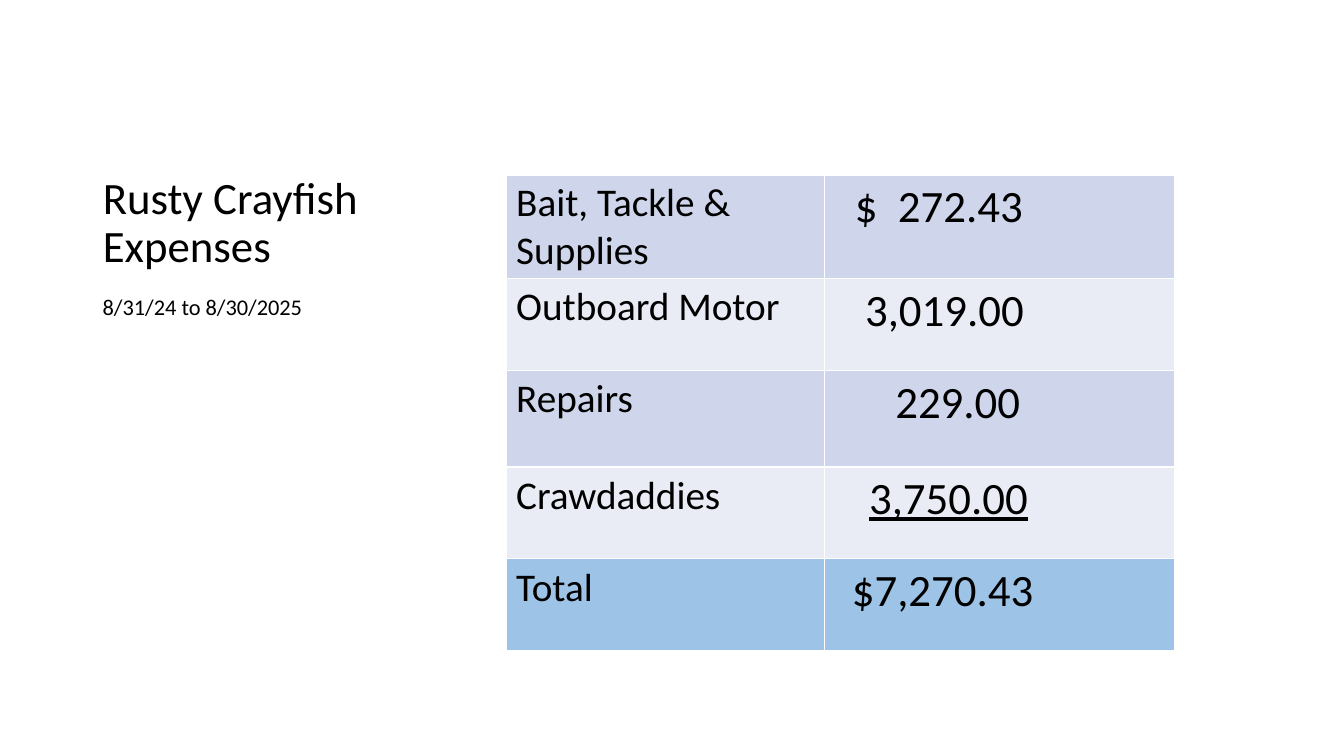
from lxml import etree
from pptx import Presentation
from pptx.dml.color import RGBColor
from pptx.enum.text import MSO_ANCHOR, PP_ALIGN
from pptx.oxml.ns import qn
from pptx.util import Inches, Pt

LEFT = PP_ALIGN.LEFT
TOP, BOTTOM = MSO_ANCHOR.TOP, MSO_ANCHOR.BOTTOM

TITLE = "Rusty Crayfish Expenses"
PERIOD = "8/31/24 to 8/30/2025"
# label, amount, indent of the amount in inches, underlined
EXPENSES = [
    ("Bait, Tackle & Supplies", "$  272.43", 0.2, False),
    ("Outboard Motor", "3,019.00", 0.3, False),
    ("Repairs", "229.00", 0.6, False),
    ("Crawdaddies", "3,750.00", 0.34, True),
    ("Total", "$7,270.43", 0.17, False),
]

THEME = {
    "font": "Calibri", "text": "000000", "border": "FFFFFF", "header": "FFFFFF",
    "bands": ("CFD5EA", "E9EBF5"), "total": "9DC3E6",
    "title_size": 32, "period_size": 16, "label_size": 28, "amount_size": 32,
}
TITLE_BOX = (0.92, 1, 4.3, 1.75)
PERIOD_BOX = (0.92, 2.89, 4.3, 4.12)
TABLE_BOX = (5.02, 1.07, 6.63, 5.37)
COLUMN_WIDTHS = (3.16, 3.47)
ROW_HEIGHTS = (0.66, 1.02, 0.91, 0.96, 0.91, 0.91)
CELL_MARGIN = 0.1
THIN, THICK = 1, 3


def write(text_frame, text, size, **extra):
    text_frame.text = text
    paragraph = text_frame.paragraphs[0]
    paragraph.alignment = LEFT
    values = {"name": THEME["font"], "size": Pt(size), "bold": False, **extra}
    for name, value in values.items():
        setattr(paragraph.font, name, value)
    paragraph.font.color.rgb = RGBColor.from_string(THEME["text"])
    return paragraph


def write_heading(shape, box, text, size, anchor):
    shape.left, shape.top, shape.width, shape.height = map(Inches, box)
    shape.text_frame.word_wrap = True
    shape.text_frame.vertical_anchor = anchor
    write(shape.text_frame, text, size).line_spacing = 0.9


def style_cell(cell, color, top=THIN, bottom=THIN):
    """Give a cell its fill and white borders; border widths are in points."""
    properties = cell._tc.get_or_add_tcPr()
    for side, width in (("L", THIN), ("R", THIN), ("T", top), ("B", bottom)):
        line = etree.SubElement(properties, qn(f"a:ln{side}"), w=str(Pt(width)))
        fill = etree.SubElement(line, qn("a:solidFill"))
        etree.SubElement(fill, qn("a:srgbClr"), val=THEME["border"])
    cell.fill.solid()
    cell.fill.fore_color.rgb = RGBColor.from_string(color)


def add_expense_table(slide):
    frame = slide.shapes.add_table(
        len(ROW_HEIGHTS), len(COLUMN_WIDTHS), *map(Inches, TABLE_BOX))
    table = frame.table
    for column, width in zip(table.columns, COLUMN_WIDTHS):
        column.width = Inches(width)
    for row, height in zip(table.rows, ROW_HEIGHTS):
        row.height = Inches(height)

    for cell in table.rows[0].cells:
        style_cell(cell, THEME["header"], bottom=THICK)
    for index, (label, amount, indent, underline) in enumerate(EXPENSES):
        is_total = index == len(EXPENSES) - 1
        color = THEME["total"] if is_total else THEME["bands"][index % 2]
        label_cell, amount_cell = table.rows[index + 1].cells
        for cell in (label_cell, amount_cell):
            style_cell(cell, color, top=THIN if index else THICK)
        write(label_cell.text_frame, label, THEME["label_size"])
        write(amount_cell.text_frame, amount, THEME["amount_size"], underline=underline)
        amount_cell.margin_left = Inches(CELL_MARGIN + indent)


def main():
    presentation = Presentation()
    presentation.slide_width = Inches(13.33)
    presentation.slide_height = Inches(7.5)
    slide = presentation.slides.add_slide(presentation.slide_layouts.get_by_name("Title Only"))
    write_heading(slide.shapes.title, TITLE_BOX, TITLE, THEME["title_size"], BOTTOM)
    period = slide.shapes.add_textbox(*map(Inches, PERIOD_BOX))
    write_heading(period, PERIOD_BOX, PERIOD, THEME["period_size"], TOP)
    add_expense_table(slide)
    presentation.save("out.pptx")


if __name__ == "__main__":
    main()
